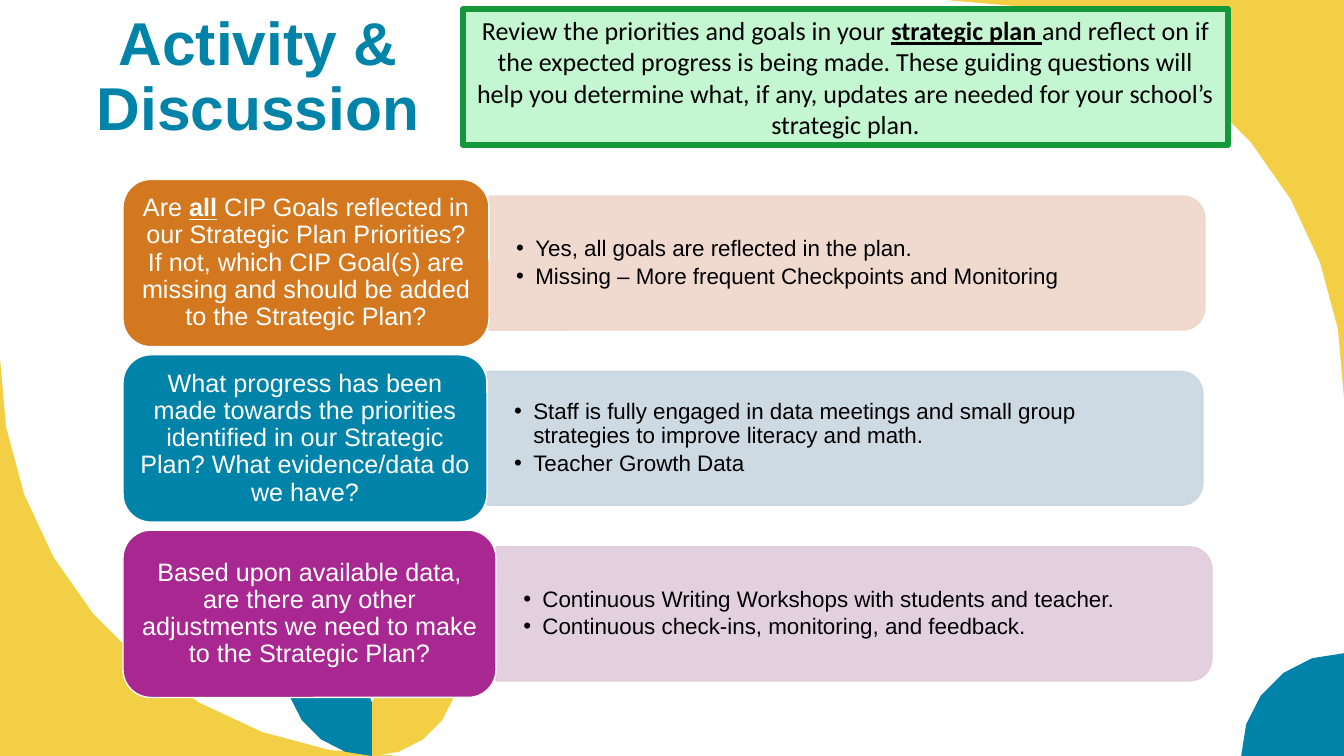
import math
from dataclasses import dataclass

import pptx
import pptx.dml.color
import pptx.enum.shapes
import pptx.enum.text
import pptx.oxml
import pptx.oxml.ns
import pptx.util
from pptx.util import Inches

SHAPE = pptx.enum.shapes.MSO_SHAPE
ALIGN = pptx.enum.text.PP_ALIGN


@dataclass(frozen=True)
class Theme:
    yellow: str = "F3CF45"
    teal: str = "0083A9"
    orange: str = "D4781F"
    purple: str = "A92791"
    peach: str = "EFD6CB"
    mist: str = "C9D7E1"
    mauve: str = "E1CBDB"
    mint: str = "C3F6D1"
    green: str = "159839"
    white: str = "FFFFFF"
    black: str = "000000"
    heading_font: str = "Arial"
    callout_font: str = "Calibri"
    title_size: float = 43.2
    callout_size: float = 18.6
    question_size: float = 18
    answer_size: float = 16


THEME = Theme()


@dataclass(frozen=True)
class Span:
    text: str
    strong: bool = False


@dataclass(frozen=True)
class Arc:
    x: float
    y: float
    radius: float
    start: int
    end: int
    pieces: int

    def points(self) -> list[tuple[float, float]]:
        turn = (self.end - self.start) / self.pieces
        angles = [math.radians(self.start + turn * i) for i in range(self.pieces + 1)]
        return [(self.x + self.radius * math.cos(a), self.y + self.radius * math.sin(a))
                for a in angles]


@dataclass(frozen=True)
class Topic:
    question: list[Span]
    answers: list[str]
    width: float
    color: str
    tint: str


TOPICS = [
    Topic([Span("Are "), Span("all", True),
           Span(" CIP Goals reflected in our Strategic Plan Priorities? If not, which CIP "
                "Goal(s) are missing and should be added to the Strategic Plan?")],
          ["Yes, all goals are reflected in the plan.",
           "Missing – More frequent Checkpoints and Monitoring"],
          3.63, THEME.orange, THEME.peach),
    Topic([Span("What progress has been made towards the priorities identified in our "
                "Strategic Plan? What evidence/data do we have?")],
          ["Staff is fully engaged in data meetings and small group strategies to improve "
           "literacy and math.", "Teacher Growth Data"],
          3.61, THEME.teal, THEME.mist),
    Topic([Span("Based upon available data, are there any other adjustments we need to make "
                "to the Strategic Plan?")],
          ["Continuous Writing Workshops with students and teacher.",
           "Continuous check-ins, monitoring, and feedback."],
          3.7, THEME.purple, THEME.mauve),
]


def rgb(color: str):
    return pptx.dml.color.RGBColor.from_string(color)


def paint(shape, fill: str, line: str | None = None, weight: float = 1) -> None:
    shape.shadow.inherit = False
    shape.fill.solid()
    shape.fill.fore_color.rgb = rgb(fill)
    if line is None:
        shape.line.fill.background()
    else:
        shape.line.color.rgb = rgb(line)
        shape.line.width = pptx.util.Pt(weight)


def add_outline(page, color: str, points: list[tuple[float, float]]) -> None:
    corners = [(Inches(x), Inches(y)) for x, y in points]
    builder = page.shapes.build_freeform(*corners[0])
    builder.add_line_segments(corners[1:], close=True)
    paint(builder.convert_to_shape(), color)


def add_panel(page, kind, left: float, top: float, width: float, height: float):
    return page.shapes.add_shape(kind, Inches(left), Inches(top), Inches(width), Inches(height))


def add_text_box(page, left: float, top: float, width: float, height: float):
    return page.shapes.add_textbox(Inches(left), Inches(top), Inches(width), Inches(height))


def set_bullet(para) -> None:
    properties = para._p.get_or_add_pPr()
    properties.set("marL", str(Inches(0.19)))
    properties.set("indent", str(Inches(-0.19)))
    namespace = pptx.oxml.ns.nsdecls("a")
    properties.append(pptx.oxml.parse_xml(f'<a:buFont {namespace} typeface="Arial"/>'))
    properties.append(pptx.oxml.parse_xml(f'<a:buChar {namespace} char="•"/>'))


def write(shape, paragraphs: list[list[Span]], *, size: float, color: str,
          font: str = THEME.heading_font, bold: bool = False, bullets: bool = False,
          line_spacing: float = 0.9, inset_x: float = 0.1, inset_y: float = 0.05) -> None:
    frame = shape.text_frame
    frame.word_wrap = True
    frame.vertical_anchor = pptx.enum.text.MSO_ANCHOR.MIDDLE
    frame.margin_left = frame.margin_right = Inches(inset_x)
    frame.margin_top = frame.margin_bottom = Inches(inset_y)
    for index, spans in enumerate(paragraphs):
        para = frame.add_paragraph() if index else frame.paragraphs[0]
        para.alignment = ALIGN.LEFT if bullets else ALIGN.CENTER
        para.line_spacing = line_spacing
        if index:
            para.space_before = pptx.util.Pt(2.4)
        if bullets:
            set_bullet(para)
        for span in spans:
            run = para.add_run()
            run.text = span.text
            run.font.name = font
            run.font.size = pptx.util.Pt(size)
            run.font.color.rgb = rgb(color)
            run.font.bold = bold or span.strong
            run.font.underline = span.strong


def set_opacity(shape, percent: int) -> None:
    for color in shape._element.spPr.iter(pptx.oxml.ns.qn("a:srgbClr")):
        alpha = color.makeelement(pptx.oxml.ns.qn("a:alpha"), {"val": str(percent * 1000)})
        color.append(alpha)


def add_background(page) -> None:
    add_outline(page, THEME.yellow, Arc(9.38, 3.95, 3.95, -90, 0, 9).points() + [(13.33, 0)])
    add_outline(page, THEME.yellow, Arc(3.95, 3.55, 3.95, 90, 180, 9).points() + [(0, 7.5)])
    add_outline(page, THEME.teal, Arc(13.33, 7.5, 1.02, 180, 270, 5).points() + [(13.33, 7.5)])
    add_outline(page, THEME.yellow, Arc(3.69, 6.64, 0.86, 0, 90, 5).points()
                + Arc(4.55, 6.97, 0.86, 180, 270, 2).points())
    add_outline(page, THEME.teal, Arc(3.69, 6.64, 0.86, 180, 90, 5).points()
                + Arc(2.83, 6.97, 0.86, 0, -90, 2).points())


def add_topic(page, topic: Topic, top: float) -> None:
    left, height = 1.22, 1.66
    bar_left, bar_length, bar_depth = left + topic.width, 7.1, 1.33
    bar = add_panel(page, SHAPE.ROUND_2_SAME_RECTANGLE, bar_left + (bar_length - bar_depth) / 2,
                    top + (height - bar_length) / 2, bar_depth, bar_length)
    bar.rotation = 90
    bar.adjustments[0] = 0.167
    paint(bar, topic.tint, topic.tint)
    set_opacity(bar, 90)
    answer = add_text_box(page, bar_left, top + 0.23, 7.04, 1.2)
    write(answer, [[Span(text)] for text in topic.answers], size=THEME.answer_size,
          color=THEME.black, bullets=True, inset_x=0.27, inset_y=0.14)
    card = add_panel(page, SHAPE.ROUNDED_RECTANGLE, left, top, topic.width, height)
    card.adjustments[0] = 0.167
    paint(card, topic.color, THEME.white)
    write(card, [topic.question], size=THEME.question_size, color=THEME.white,
          inset_x=0.07, inset_y=0.04)


def main() -> None:
    deck = pptx.Presentation()
    deck.slide_width, deck.slide_height = Inches(13.33), Inches(7.5)
    page = deck.slides.add_slide(deck.slide_layouts[6])
    add_background(page)
    callout = add_panel(page, SHAPE.RECTANGLE, 4.59, 0.09, 7.59, 1.35)
    paint(callout, THEME.mint, THEME.green, 4)
    write(callout, [[Span("Review the priorities and goals in your "),
                     Span("strategic plan ", True),
                     Span("and reflect on if the expected progress is being made. These guiding "
                          "questions will help you determine what, if any, updates are needed "
                          "for your school’s strategic plan.")]],
          size=THEME.callout_size, color=THEME.black, font=THEME.callout_font, line_spacing=1.0)
    title = add_text_box(page, 0.58, 0.1, 3.96, 1.35)
    write(title, [[Span("Activity & Discussion")]], size=THEME.title_size, color=THEME.teal,
          bold=True)
    for row, topic in enumerate(TOPICS):
        add_topic(page, topic, 1.78 + row * 1.74)
    deck.save("out.pptx")


if __name__ == "__main__":
    main()
